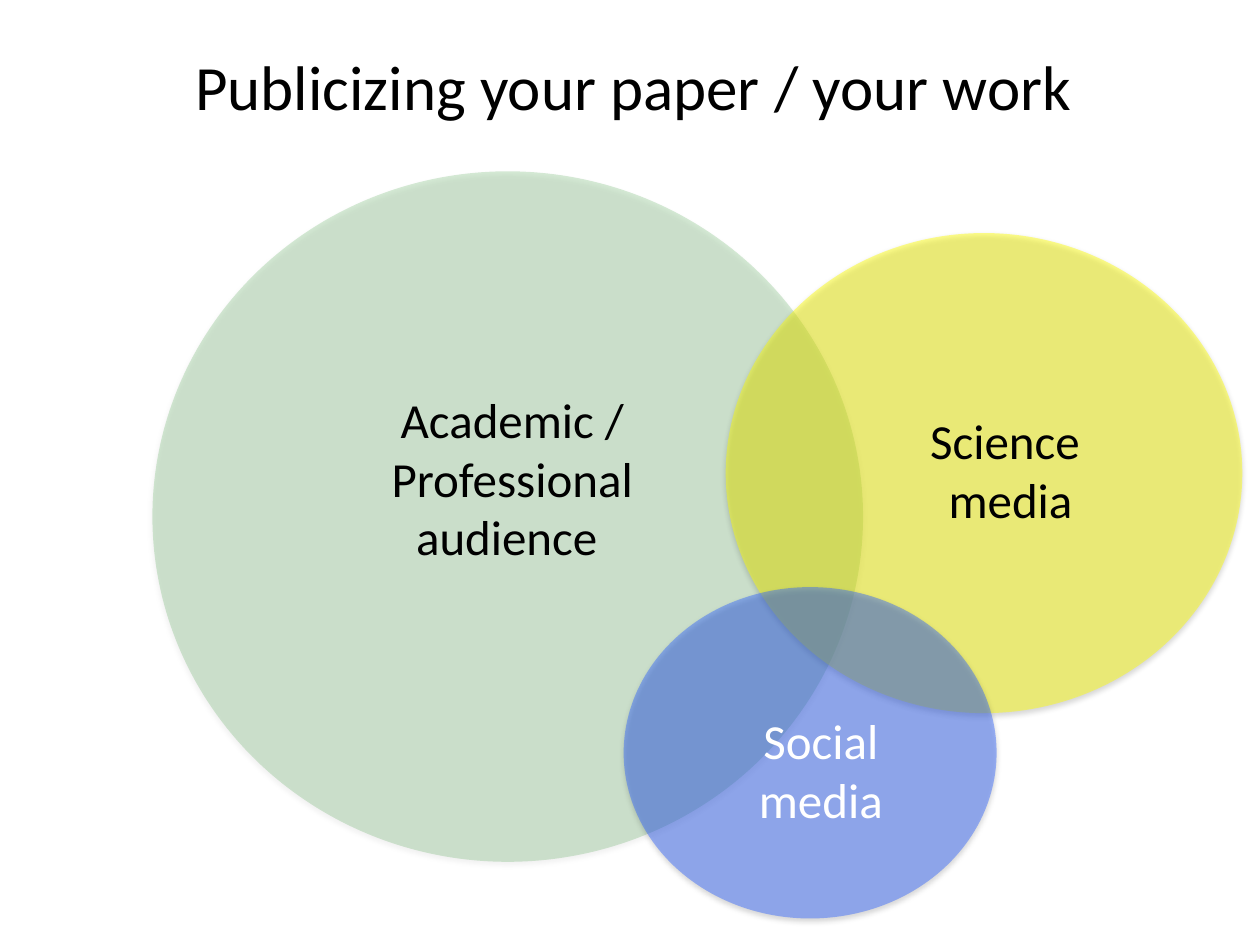
import pptx
import pptx.dml.color
import pptx.enum.shapes
import pptx.enum.text
import pptx.oxml
import pptx.oxml.ns
import pptx.util
from pptx.util import Inches

RGBColor = pptx.dml.color.RGBColor
BLACK = RGBColor(0x00, 0x00, 0x00)
WHITE = RGBColor(0xFF, 0xFF, 0xFF)
GREEN = RGBColor(0x00, 0x80, 0x00)
YELLOW = RGBColor(0xFF, 0xFF, 0x00)
BLUE = RGBColor(0x33, 0x66, 0xFF)
FONT = "Calibri"
TITLE_ONLY = 5

# circle box, fill, opacity in percent, label box, label text, label colour
AUDIENCES = [
    ((1.21, 1.36, 5.64, 5.48), GREEN, 16,
     (2.52, 3.04, 3.09, 1.51), "Academic / Professional\naudience ", BLACK),
    ((5.76, 1.85, 4.1, 3.81), YELLOW, 45,
     (7.26, 3.21, 1.52, 1.17), "Science \nmedia", BLACK),
    ((4.95, 4.66, 2.96, 2.63), BLUE, 45,
     (5.63, 5.59, 1.77, 1.35), "Social media", WHITE),
]


def write_text(shape, text, size, color, align, wrap):
    frame = shape.text_frame
    frame.text = text
    frame.word_wrap = wrap
    frame.auto_size = pptx.enum.text.MSO_AUTO_SIZE.NONE
    frame.vertical_anchor = pptx.enum.text.MSO_ANCHOR.TOP
    for para in frame.paragraphs:
        para.alignment = align
        for span in para.runs:
            span.font.name = FONT
            span.font.size = pptx.util.Pt(size)
            span.font.color.rgb = color


def set_opacity(shape, percent):
    color = shape.fill._xPr.find(".//" + pptx.oxml.ns.qn("a:srgbClr"))
    alpha = pptx.oxml.parse_xml(
        f'<a:alpha {pptx.oxml.ns.nsdecls("a")} val="{percent * 1000}"/>')
    color.append(alpha)


def add_soft_shadow(shape):
    """Cast a faint black shadow straight down."""
    shape._element.spPr.append(pptx.oxml.parse_xml(
        f'<a:effectLst {pptx.oxml.ns.nsdecls("a")}>'
        f'<a:outerShdw blurRad="{pptx.util.Pt(3.1)}" dist="{pptx.util.Pt(1.8)}"'
        ' dir="5400000" rotWithShape="0">'
        '<a:srgbClr val="000000"><a:alpha val="35000"/></a:srgbClr>'
        '</a:outerShdw></a:effectLst>'))


def place_title(page, box, text):
    title = page.shapes.title
    title.left, title.top, title.width, title.height = map(Inches, box)
    write_text(title, text, 36, BLACK, pptx.enum.text.PP_ALIGN.LEFT, False)


def add_audience(page, circle_box, fill, opacity, label_box, text, color):
    """Add one Venn circle grouped with its label."""
    group = page.shapes.add_group_shape()
    circle = group.shapes.add_shape(
        pptx.enum.shapes.MSO_SHAPE.OVAL, *map(Inches, circle_box))
    circle.fill.solid()
    circle.fill.fore_color.rgb = fill
    set_opacity(circle, opacity)
    circle.line.fill.background()
    add_soft_shadow(circle)
    label = group.shapes.add_textbox(*map(Inches, label_box))
    write_text(label, text, 28, color, pptx.enum.text.PP_ALIGN.CENTER, True)


def main():
    deck = pptx.Presentation()
    deck.slide_width, deck.slide_height = Inches(10), Inches(7.5)
    page = deck.slides.add_slide(deck.slide_layouts[TITLE_ONLY])
    place_title(page, (1.45, 0.33, 7.24, 1.31),
                "Publicizing your paper / your work")
    for audience in AUDIENCES:
        add_audience(page, *audience)
    deck.save("out.pptx")


if __name__ == "__main__":
    main()
